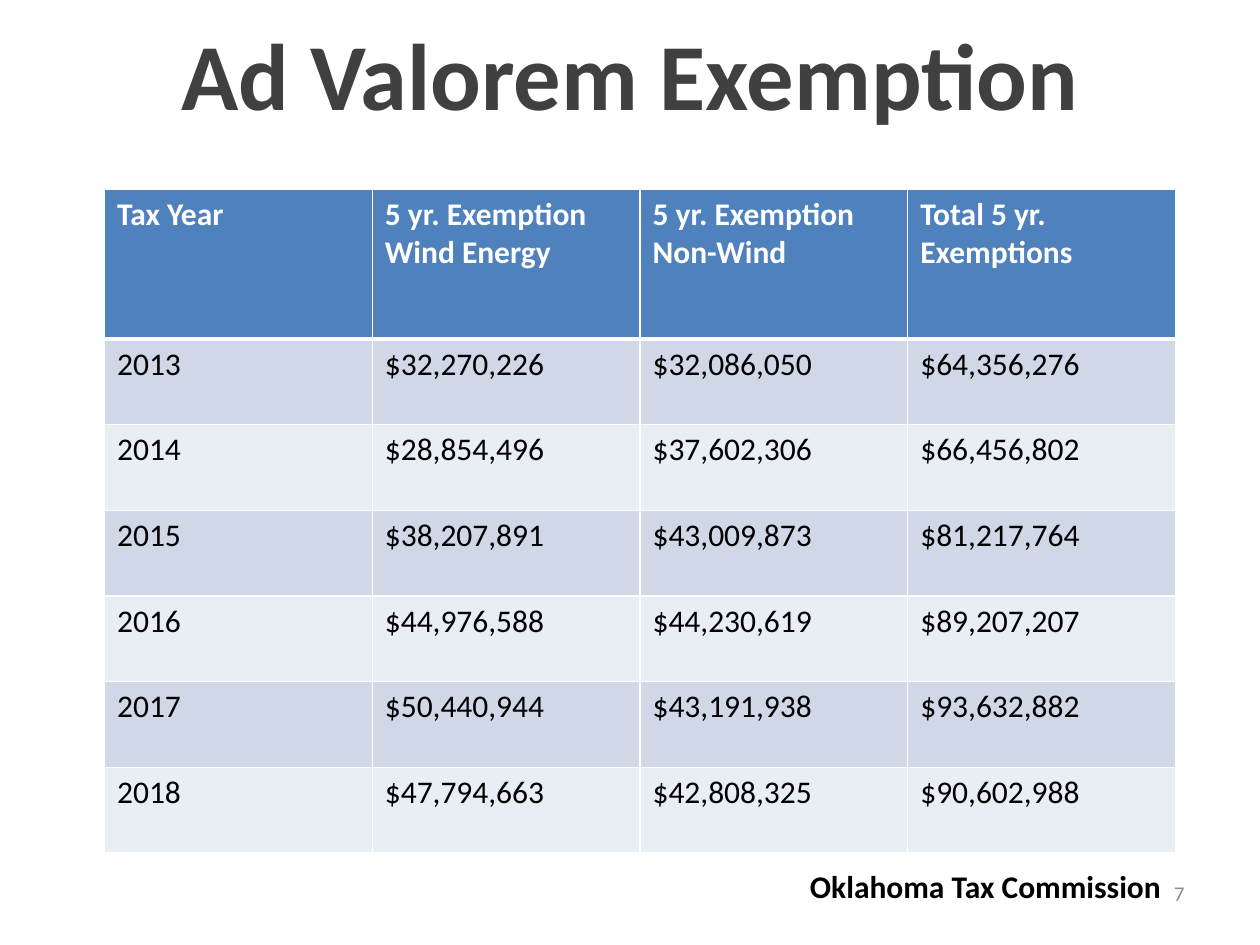
"""Build the Ad Valorem Exemption slide with its table of yearly amounts."""
from lxml import etree
from pptx import Presentation
from pptx.dml.color import RGBColor
from pptx.enum.text import MSO_ANCHOR, MSO_AUTO_SIZE, PP_ALIGN
from pptx.oxml.ns import qn
from pptx.util import Inches, Pt

LEFT, CENTER, RIGHT = PP_ALIGN.LEFT, PP_ALIGN.CENTER, PP_ALIGN.RIGHT
TOP, MIDDLE = MSO_ANCHOR.TOP, MSO_ANCHOR.MIDDLE
NO_FIT = MSO_AUTO_SIZE.NONE
TITLE_ONLY = 5

HEADERS = ["Tax Year", "5 yr. Exemption\nWind Energy",
           "5 yr. Exemption\nNon-Wind", "Total 5 yr.\nExemptions"]
AMOUNTS = [
    ["2013", "$32,270,226", "$32,086,050", "$64,356,276"],
    ["2014", "$28,854,496", "$37,602,306", "$66,456,802"],
    ["2015", "$38,207,891", "$43,009,873", "$81,217,764"],
    ["2016", "$44,976,588", "$44,230,619", "$89,207,207"],
    ["2017", "$50,440,944", "$43,191,938", "$93,632,882"],
    ["2018", "$47,794,663", "$42,808,325", "$90,602,988"],
]


def color(value):
    return RGBColor.from_string(value)


def write(frame, text, size=18, ink="000000", bold=False, align=LEFT, font="Calibri"):
    frame.text = text
    for para in frame.paragraphs:
        para.alignment = align
        for span in para.runs:
            span.font.name = font
            span.font.size = Pt(size)
            span.font.bold = bold
            span.font.color.rgb = color(ink)


class ExemptionPage:
    header_fill = "4F81BD"
    band_fills = ("D0D8E8", "E9EDF4")
    border = "FFFFFF"

    def __init__(self, deck):
        self.page = deck.slides.add_slide(deck.slide_layouts[TITLE_ONLY])

    def place(self, box, left, top, width, height, anchor):
        box.left, box.top = Inches(left), Inches(top)
        box.width, box.height = Inches(width), Inches(height)
        frame = box.text_frame
        frame.word_wrap = True
        frame.auto_size = NO_FIT
        frame.vertical_anchor = anchor
        return frame

    def title(self, text, *area):
        frame = self.place(self.page.shapes.title, *area, TOP)
        write(frame, text, size=54, ink="404040", bold=True, align=CENTER)

    def label(self, text, *area, anchor=TOP, **style):
        box = self.page.shapes.add_textbox(0, 0, 0, 0)
        write(self.place(box, *area, anchor), text, **style)

    def edges(self, cell, bottom):
        properties = cell._tc.get_or_add_tcPr()
        widths = {"a:lnL": 1, "a:lnR": 1, "a:lnT": 1, "a:lnB": bottom}
        for position, (tag, points) in enumerate(widths.items()):
            line = etree.Element(qn(tag), w=str(Pt(points)))
            fill = etree.SubElement(line, qn("a:solidFill"))
            etree.SubElement(fill, qn("a:srgbClr"), val=self.border)
            properties.insert(position, line)

    def table(self, rows, left, top, width, header_height, row_height):
        height = header_height + row_height * (len(rows) - 1)
        frame = self.page.shapes.add_table(
            len(rows), len(rows[0]), Inches(left), Inches(top),
            Inches(width), Inches(height))
        for index, values in enumerate(rows):
            header = index == 0
            row = frame.table.rows[index]
            row.height = Inches(header_height if header else row_height)
            fill = self.header_fill if header else self.band_fills[(index - 1) % 2]
            for cell, text in zip(row.cells, values):
                write(cell.text_frame, text, bold=header,
                      ink="FFFFFF" if header else "000000")
                cell.fill.solid()
                cell.fill.fore_color.rgb = color(fill)
                self.edges(cell, bottom=3 if header else 1)


def main():
    deck = Presentation()
    deck.slide_width, deck.slide_height = Inches(10), Inches(7.5)
    page = ExemptionPage(deck)
    page.table([HEADERS] + AMOUNTS, 0.83, 1.5, 8.5, 1.19, 0.68)
    page.label("Oklahoma Tax Commission", 6.33, 6.83, 3.5, 0.4, bold=True)
    page.title("Ad Valorem Exemption", 0, 0.08, 10, 1.17)
    page.label("7", 7.17, 6.83, 2.33, 0.52, anchor=MIDDLE,
               size=12, ink="8C8C8C", align=RIGHT)
    deck.save("out.pptx")


if __name__ == "__main__":
    main()
